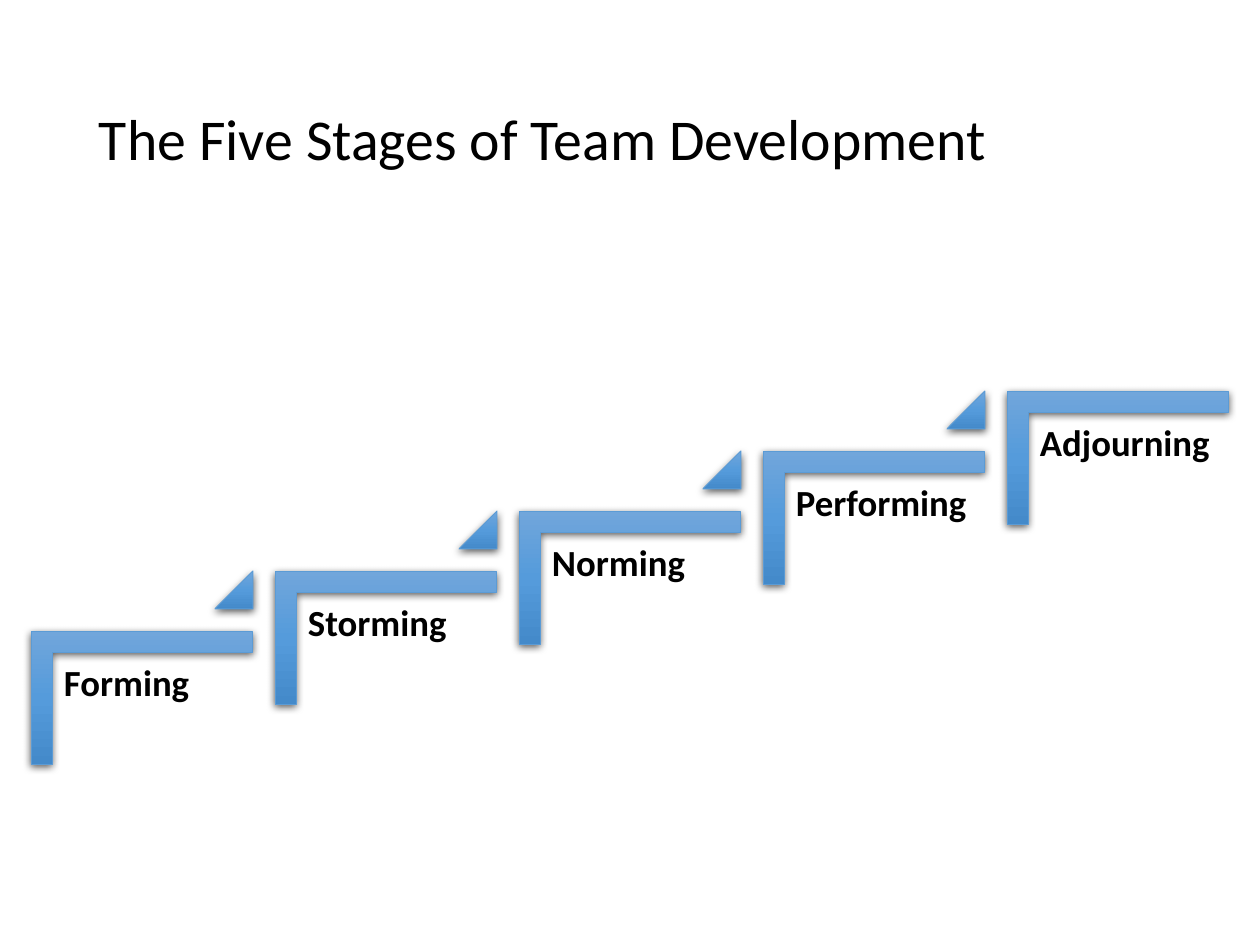
from dataclasses import dataclass

from lxml import etree
from pptx import Presentation
from pptx.dml.color import RGBColor
from pptx.enum.shapes import MSO_SHAPE
from pptx.enum.text import MSO_ANCHOR
from pptx.oxml import parse_xml
from pptx.util import Pt

CORNER, TRIANGLE = MSO_SHAPE.CORNER, MSO_SHAPE.ISOSCELES_TRIANGLE
MIDDLE, TOP = MSO_ANCHOR.MIDDLE, MSO_ANCHOR.TOP
NS = "http://schemas.openxmlformats.org/drawingml/2006/main"

TITLE = "The Five Stages of Team Development"
STAGES = ["Forming", "Storming", "Norming", "Performing", "Adjourning"]

# Lengths in px, 126 to the inch
PX = 914400 // 126
SLIDE = (1260, 945)
TITLE_BOX = (87, 50, 1086, 183)
STEP = (244, -60)
# Boxes of the first stage; each later stage moves on by STEP
ANGLE_BOX = (75, 587, 133, 221)
LABEL_BOX = (53, 654, 199, 175)
ARROW_BOX = (215, 571, 38, 38)
TITLE_PAD = (12, 6)
LABEL_PAD = (11, 11)


@dataclass(frozen=True)
class Theme:
    font: str = "Calibri"
    ink: str = "000000"
    edge: str = "5B9BD5"
    shades: tuple = ((0, "71A6DB"), (50, "559BDB"), (100, "448ACA"))
    title: int = 33
    label: int = 21


LOOK = Theme()


def emu(box):
    return [n * PX for n in box]


def shift(box, n):
    left, top, width, height = box
    return left + n * STEP[0], top + n * STEP[1], width, height


def add_text(slide, box, text, size, pad, anchor, bold=False):
    frame = slide.shapes.add_textbox(*emu(box)).text_frame
    frame.word_wrap = True
    frame.vertical_anchor = anchor
    frame.margin_left = frame.margin_right = pad[0] * PX
    frame.margin_top = frame.margin_bottom = pad[1] * PX
    par = frame.paragraphs[0]
    par.text = text
    par.line_spacing = 0.9
    par.font.name = LOOK.font
    par.font.size = Pt(size)
    par.font.bold = bold
    par.font.color.rgb = RGBColor.from_string(LOOK.ink)


def shade(shape):
    """Give a shape the upright gradient, thin edge and soft shadow."""
    shape.line.color.rgb = RGBColor.from_string(LOOK.edge)
    shape.line.width = Pt(0.5)
    shape.shadow.inherit = False
    stops = "".join(
        f'<a:gs pos="{pos * 1000}"><a:srgbClr val="{tint}"/></a:gs>'
        for pos, tint in LOOK.shades)
    fill = parse_xml(
        f'<a:gradFill xmlns:a="{NS}" rotWithShape="0"><a:gsLst>{stops}</a:gsLst>'
        '<a:lin ang="5400000" scaled="0"/></a:gradFill>')
    props = shape.fill._xPr
    props.find(f"{{{NS}}}prstGeom").addnext(fill)
    glow = etree.SubElement(
        props.find(f"{{{NS}}}effectLst"), f"{{{NS}}}outerShdw",
        blurRad=str(Pt(4.5)), dist=str(Pt(1.5)), dir="5400000",
        algn="ctr", rotWithShape="0")
    tint = etree.SubElement(glow, f"{{{NS}}}srgbClr", val=LOOK.ink)
    etree.SubElement(tint, f"{{{NS}}}alpha", val="63000")


def add_block(slide, kind, box, *bends, turn=0):
    shape = slide.shapes.add_shape(kind, *emu(box))
    for i, bend in enumerate(bends):
        shape.adjustments[i] = bend
    shape.rotation = turn
    shade(shape)


def main():
    deck = Presentation()
    deck.slide_width, deck.slide_height = emu(SLIDE)
    slide = deck.slides.add_slide(deck.slide_layouts[6])
    add_text(slide, TITLE_BOX, TITLE, LOOK.title, TITLE_PAD, MIDDLE)
    for n, stage in enumerate(STAGES):
        add_block(slide, CORNER, shift(ANGLE_BOX, n), 0.16, 0.16, turn=90)
        add_text(slide, shift(LABEL_BOX, n), stage, LOOK.label,
                 LABEL_PAD, TOP, bold=True)
        if n < len(STAGES) - 1:
            add_block(slide, TRIANGLE, shift(ARROW_BOX, n), 1)
    deck.save("out.pptx")


if __name__ == "__main__":
    main()
